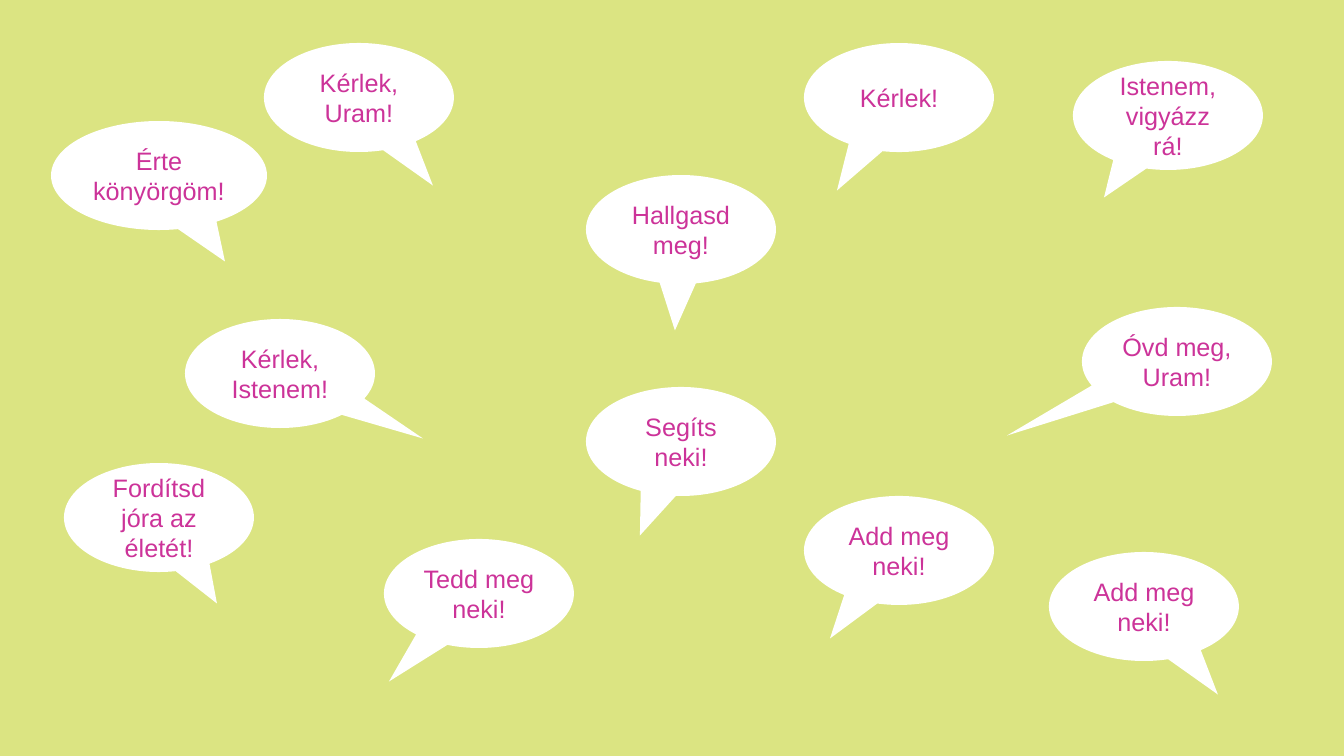
import pptx
import pptx.util
import pptx.dml.color
import pptx.enum.shapes
import pptx.enum.text

SCALE = 914400 / 100.8
WIDE, HIGH = 190, 109
COLORS = {"back": "DBE482", "bubble": "FFFFFF", "text": "CC3399"}
FONT = {"name": "Arial", "size": pptx.util.Pt(18)}

# text, left, top, tip offset from the bubble's centre (x, y), all in px
PRAYERS = [
    ("Fordítsd jóra az életét!", 64, 463, 58, 86),
    ("Tedd meg neki!", 384, 539, -90, 88),
    ("Segíts neki!", 586, 387, -41, 94),
    ("Add meg neki!", 804, 496, -69, 88),
    ("Add meg neki!", 1049, 552, 74, 88),
    ("Kérlek, Istenem!", 185, 319, 143, 65),
    ("Óvd meg, Uram!", 1082, 307, -170, 74),
    ("Istenem, vigyázz rá!", 1073, 61, -64, 82),
    ("Érte könyörgöm!", 51, 121, 66, 86, 216),
    ("Kérlek, Uram!", 264, 43, 74, 88),
    ("Hallgasd meg!", 586, 175, -6, 101),
    ("Kérlek!", 804, 43, -62, 93),
]


def px(count):
    return pptx.util.Emu(round(count * SCALE))


def paint(fill, name):
    fill.solid()
    fill.fore_color.rgb = pptx.dml.color.RGBColor.from_string(COLORS[name])


def bubble(slide, text, left, top, tip_x, tip_y, wide=WIDE):
    kind = pptx.enum.shapes.MSO_SHAPE.OVAL_CALLOUT
    shape = slide.shapes.add_shape(kind, px(left), px(top), px(wide), px(HIGH))
    shape.adjustments[0] = tip_x / wide
    shape.adjustments[1] = tip_y / HIGH
    shape.shadow.inherit = False
    paint(shape.fill, "bubble")
    shape.line.fill.background()
    frame = shape.text_frame
    frame.word_wrap = True
    frame.vertical_anchor = pptx.enum.text.MSO_ANCHOR.MIDDLE
    para = frame.paragraphs[0]
    para.alignment = pptx.enum.text.PP_ALIGN.CENTER
    run = para.add_run()
    run.text = text
    for key, value in FONT.items():
        setattr(run.font, key, value)
    paint(run.font.fill, "text")


def main():
    deck = pptx.Presentation()
    deck.slide_width, deck.slide_height = px(1344), px(756)
    slide = deck.slides.add_slide(deck.slide_layouts[6])
    paint(slide.background.fill, "back")
    for prayer in PRAYERS:
        bubble(slide, *prayer)
    deck.save("out.pptx")


if __name__ == "__main__":
    main()
